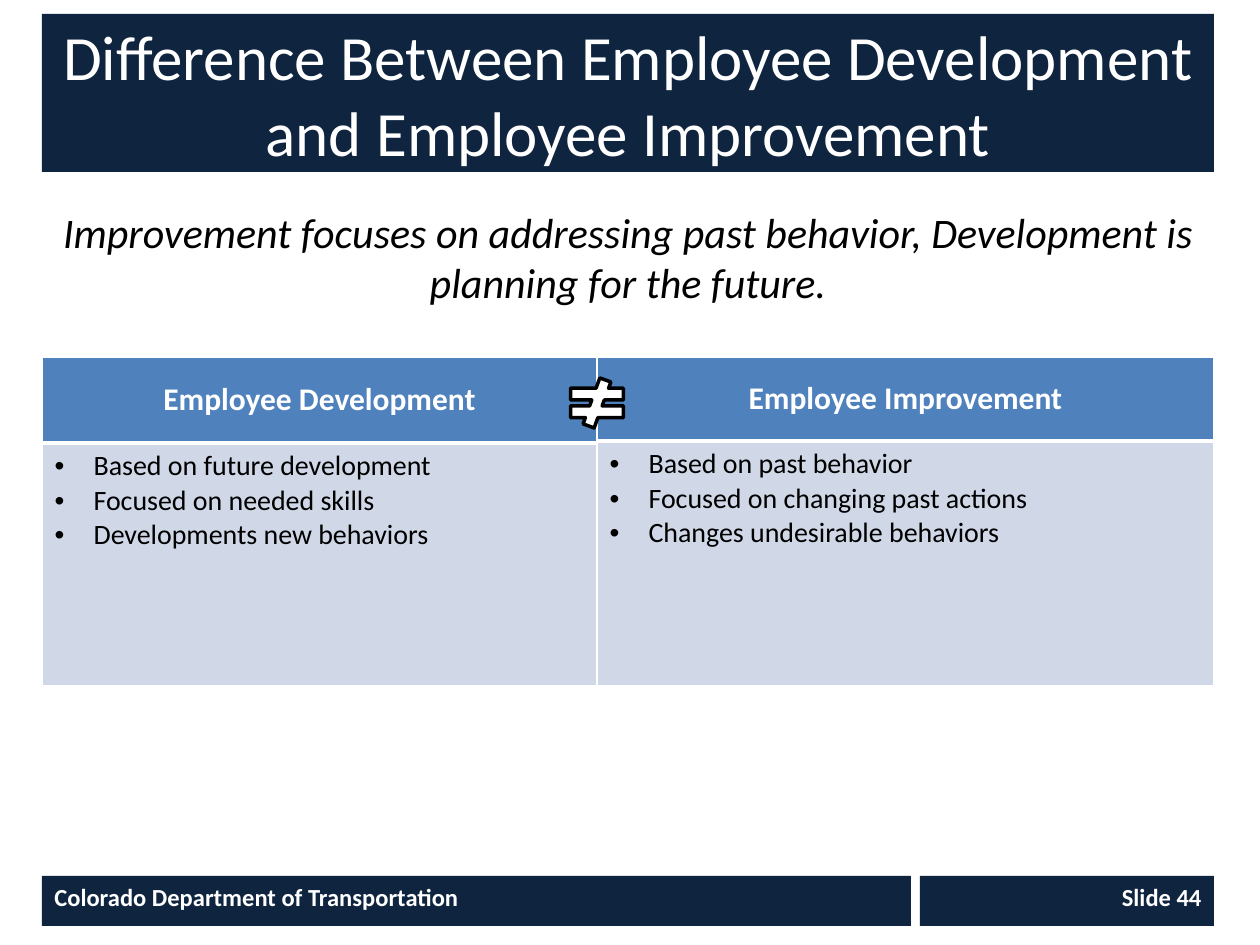
from dataclasses import dataclass

from lxml.etree import SubElement
from pptx import Presentation
from pptx.dml.color import RGBColor
from pptx.enum.shapes import MSO_SHAPE
from pptx.enum.text import MSO_ANCHOR, PP_ALIGN
from pptx.oxml.ns import qn
from pptx.util import Emu, Pt


@dataclass(frozen=True)
class Theme:
    font: str = "Calibri"
    navy: str = "0F243E"
    blue: str = "4F81BD"
    pale: str = "D0D8E8"
    white: str = "FFFFFF"
    black: str = "000000"
    title: int = 36
    lead: int = 24
    head: int = 18
    item: int = 16
    footer: int = 14


def px(n):
    return Emu(round(n * 914400 / 126))


def rgb(value):
    return RGBColor.from_string(value)


class Deck:
    def __init__(self, theme, width, height):
        self.theme = theme
        self.prs = Presentation()
        self.prs.slide_width, self.prs.slide_height = px(width), px(height)
        self.slide = self.prs.slides.add_slide(self.prs.slide_layouts[6])

    def add_run(self, p, text, size, color, align=PP_ALIGN.LEFT, bold=False, italic=False):
        p.alignment = align
        r = p.add_run()
        r.text = text
        f = r.font
        f.name, f.size, f.bold, f.italic = self.theme.font, Pt(size), bold, italic
        f.color.rgb = rgb(color)

    def shape(self, kind, box, fill, line=None):
        sp = self.slide.shapes.add_shape(kind, *map(px, box))
        sp.shadow.inherit = False
        sp.fill.solid()
        sp.fill.fore_color.rgb = rgb(fill)
        if line:
            sp.line.color.rgb = rgb(line)
            sp.line.width = Pt(2)
        else:
            sp.line.fill.background()
        return sp

    def bar(self, box, text, size, anchor=MSO_ANCHOR.TOP, **style):
        tf = self.shape(MSO_SHAPE.RECTANGLE, box, self.theme.navy).text_frame
        tf.word_wrap = True
        tf.vertical_anchor = anchor
        self.add_run(tf.paragraphs[0], text, size, self.theme.white, **style)

    def text(self, box, text, size, **style):
        tf = self.slide.shapes.add_textbox(*map(px, box)).text_frame
        tf.word_wrap = True
        self.add_run(tf.paragraphs[0], text, size, self.theme.black, **style)

    def cell(self, cell, fill, top, bottom):
        pr = cell._tc.get_or_add_tcPr()
        for side, width in (("L", 1), ("R", 1), ("T", top), ("B", bottom)):
            ln = SubElement(pr, qn(f"a:ln{side}"), w=str(Pt(width)))
            SubElement(SubElement(ln, qn("a:solidFill")), qn("a:srgbClr"), val=self.theme.white)
        cell.fill.solid()
        cell.fill.fore_color.rgb = rgb(fill)

    def bullet(self, p):
        pr = p._p.get_or_add_pPr()
        indent = px(39)
        pr.set("marL", str(indent))
        pr.set("indent", str(-indent))
        SubElement(pr, qn("a:buFont"), typeface="Arial")
        SubElement(pr, qn("a:buChar"), char="•")

    def table(self, box, head_height, heading, items):
        t = self.theme
        table = self.slide.shapes.add_table(2, 1, *map(px, box)).table
        table.horz_banding = False
        table.rows[0].height = px(head_height)
        table.rows[1].height = px(box[3] - head_height)
        head, body = table.cell(0, 0), table.cell(1, 0)
        self.cell(head, t.blue, 1, 3)
        self.cell(body, t.pale, 3, 1)
        head.vertical_anchor = MSO_ANCHOR.MIDDLE
        self.add_run(head.text_frame.paragraphs[0], heading, t.head, t.white,
                     PP_ALIGN.CENTER, bold=True)
        tf = body.text_frame
        for i, item in enumerate(items):
            p = tf.add_paragraph() if i else tf.paragraphs[0]
            self.bullet(p)
            self.add_run(p, item, t.item, t.black)


def main():
    t = Theme()
    deck = Deck(t, 1260, 945)
    left, width = 42, 1172

    deck.table((597, 357, 617, 329), 84, "Employee Improvement", [
        "Based on past behavior",
        "Focused on changing past actions",
        "Changes undesirable behaviors",
    ])
    deck.table((left, 357, 555, 329), 86, "Employee Development", [
        "Based on future development",
        "Focused on needed skills",
        "Developments new behaviors",
    ])
    deck.bar((left, 14, width, 158),
             "Difference Between Employee Development and Employee Improvement",
             t.title, MSO_ANCHOR.MIDDLE, align=PP_ALIGN.CENTER)
    deck.bar((920, 876, 294, 50), "Slide 44", t.footer, align=PP_ALIGN.RIGHT, bold=True)
    deck.bar((left, 876, 869, 50), "Colorado Department of Transportation", t.footer, bold=True)
    deck.text((left, 200, width, 105),
              "Improvement focuses on addressing past behavior, "
              "Development is planning for the future.",
              t.lead, align=PP_ALIGN.CENTER, italic=True)
    deck.shape(MSO_SHAPE.MATH_NOT_EQUAL, (561, 378, 72, 50), t.white, t.black)
    deck.prs.save("out.pptx")


if __name__ == "__main__":
    main()
